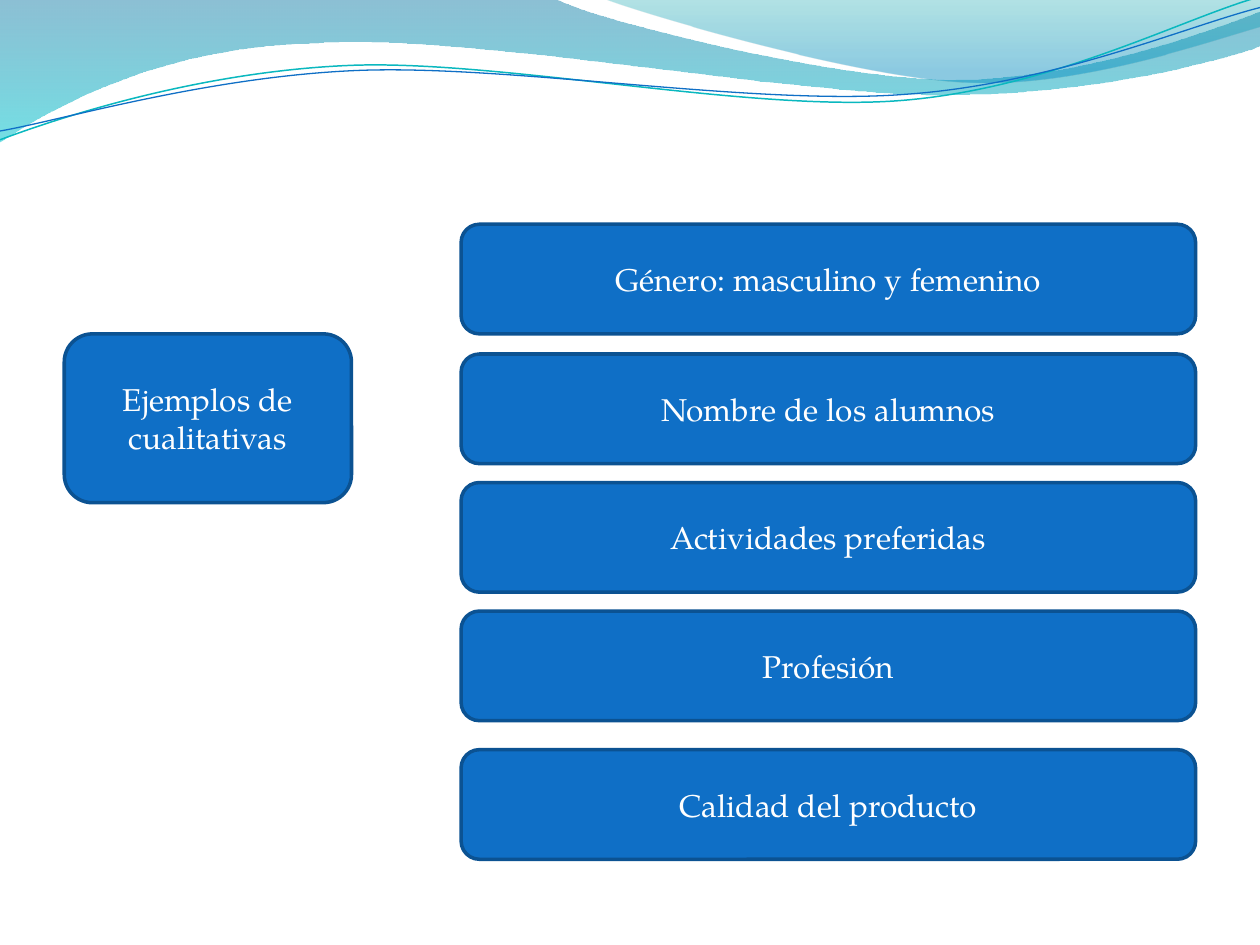
from pptx import Presentation
from pptx.dml.color import RGBColor
from pptx.enum.shapes import MSO_SHAPE
from pptx.enum.text import MSO_ANCHOR, PP_ALIGN
from pptx.oxml.ns import qn
from pptx.util import Inches, Pt
from lxml.etree import SubElement

FONT = "TeX Gyre Pagella"
COLORS = {"box": "0F6FC6", "border": "0B5292", "text": "FFFFFF",
          "teal_line": "0AB8BF", "blue_line": "0F6FC6"}

TOPIC = "Ejemplos de cualitativas"
EXAMPLES = [("Género: masculino y femenino", 1.78),
            ("Nombre de los alumnos", 2.81),
            ("Actividades preferidas", 3.83),
            ("Profesión", 4.85),
            ("Calidad del producto", 5.95)]

# Each segment holds one point (straight) or three (cubic curve).
# Gradient stops are (position, colour, opacity in percent).
BANDS = [
    {"start": (0, 0),
     "segments": [[(4.4, -0.01)],
                  [(4.76, 0.17), (6.64, 0.63), (7.58, 0.63)],
                  [(8.53, 0.63), (9.58, 0.26), (10, 0.09)],
                  [(10.01, 0.36)],
                  [(9.83, 0.44), (8.7, 0.76), (7.46, 0.75)],
                  [(6.22, 0.75), (3.82, 0.28), (2.57, 0.34)],
                  [(1.29, 0.36), (0.46, 0.83), (-0.01, 1.13)]],
     "stops": [(0, "0074A1", 45), (1, "00C6CF", 55)]},
    {"start": (4.79, -0.01),
     "segments": [[(5.09, 0.11), (6.82, 0.62), (7.69, 0.65)],
                  [(8.56, 0.69), (9.61, 0.32), (10, 0.21)],
                  [(10, 0)]],
     "stops": [(0, "00A1A9", 30), (0.8, "008BBF", 45)]},
]
WAVES = [
    {"start": (0, 1.11), "color": "teal_line", "width": 0.85,
     "segments": [[(0.48, 0.93), (1.58, 0.57), (2.77, 0.52)],
                  [(3.95, 0.47), (5.93, 0.89), (7.13, 0.8)],
                  [(8.33, 0.71), (9.38, 0.15), (9.98, -0.02)]]},
    {"start": (0, 1.04), "color": "blue_line", "width": 0.75,
     "segments": [[(0.47, 0.96), (1.64, 0.61), (2.83, 0.56)],
                  [(4.03, 0.51), (5.97, 0.84), (7.17, 0.75)],
                  [(8.36, 0.67), (9.41, 0.21), (10, 0.06)]]},
]


def rgb(name):
    return RGBColor.from_string(COLORS[name])


def add_outline(slide, start, segments, close):
    """Build a freeform of lines, then turn each three-point segment into a curve."""
    points = [(Inches(x), Inches(y)) for segment in segments for x, y in segment]
    builder = slide.shapes.build_freeform(*map(Inches, start))
    builder.add_line_segments(points, close=close)
    shape = builder.convert_to_shape()
    shape.shadow.inherit = False

    lines = iter(list(shape._element.spPr.iter(qn("a:lnTo"))))
    for segment in segments:
        first, *others = [next(lines) for _ in segment]
        if others:
            first.tag = qn("a:cubicBezTo")
        for line in others:
            first.append(line[0])
            line.getparent().remove(line)
    return shape


def add_band(slide, band):
    shape = add_outline(slide, band["start"], band["segments"], close=True)
    shape.line.fill.background()
    shape.fill.gradient()
    shape.fill.gradient_angle = 270
    for stop, (position, color, _) in zip(shape.fill.gradient_stops, band["stops"]):
        stop.position = position
        stop.color.rgb = RGBColor.from_string(color)
    stop_colors = list(shape._element.spPr.iter(qn("a:srgbClr")))
    for element, (_, _, opacity) in zip(stop_colors, band["stops"]):
        SubElement(element, qn("a:alpha")).set("val", str(opacity * 1000))


def add_wave(slide, wave):
    shape = add_outline(slide, wave["start"], wave["segments"], close=False)
    shape.fill.background()
    shape.line.color.rgb = rgb(wave["color"])
    shape.line.width = Pt(wave["width"])


def add_box(slide, text, left, top, width, height):
    shape = slide.shapes.add_shape(MSO_SHAPE.ROUNDED_RECTANGLE,
                                   *map(Inches, (left, top, width, height)))
    shape.shadow.inherit = False
    shape.fill.solid()
    shape.fill.fore_color.rgb = rgb("box")
    shape.line.color.rgb = rgb("border")
    shape.line.width = Pt(2)
    frame = shape.text_frame
    frame.word_wrap = True
    frame.vertical_anchor = MSO_ANCHOR.MIDDLE
    paragraph = frame.paragraphs[0]
    paragraph.alignment = PP_ALIGN.CENTER
    run = paragraph.add_run()
    run.text = text
    for name, value in {"name": FONT, "size": Pt(18)}.items():
        setattr(run.font, name, value)
    run.font.color.rgb = rgb("text")


def main():
    presentation = Presentation()
    presentation.slide_width = Inches(10)
    presentation.slide_height = Inches(7.5)
    slide = presentation.slides.add_slide(presentation.slide_layouts[6])

    for band in BANDS:
        add_band(slide, band)
    for wave in WAVES:
        add_wave(slide, wave)

    add_box(slide, TOPIC, 0.51, 2.65, 2.28, 1.34)
    for text, top in EXAMPLES:
        add_box(slide, text, 3.66, top, 5.83, 0.87)

    presentation.save("out.pptx")


if __name__ == "__main__":
    main()
